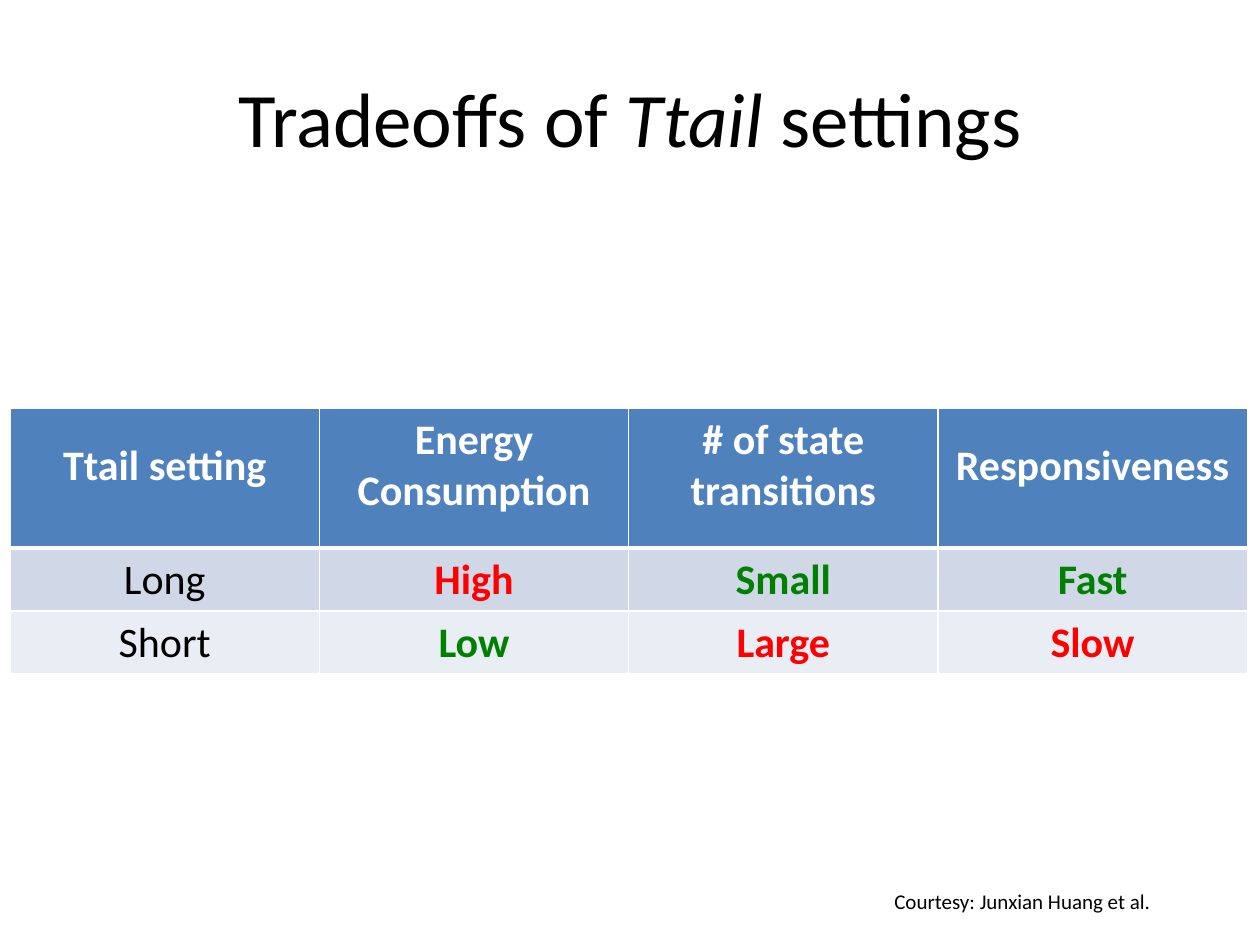
from lxml import etree
from pptx import Presentation
from pptx.dml.color import RGBColor
from pptx.enum.text import MSO_ANCHOR, PP_ALIGN
from pptx.oxml.ns import qn
from pptx.util import Inches, Pt

CENTER, LEFT = PP_ALIGN.CENTER, PP_ALIGN.LEFT
MIDDLE, TOP = MSO_ANCHOR.MIDDLE, MSO_ANCHOR.TOP

BLACK = RGBColor(0x00, 0x00, 0x00)
WHITE = RGBColor(0xFF, 0xFF, 0xFF)
RED = RGBColor(0xFF, 0x00, 0x00)
GREEN = RGBColor(0x00, 0x80, 0x00)
HEADER_BLUE = RGBColor(0x4F, 0x81, 0xBD)
BAND_DARK = RGBColor(0xD0, 0xD8, 0xE8)
BAND_LIGHT = RGBColor(0xE9, 0xED, 0xF4)

FONT = "Calibri"
HEADINGS = ["Ttail setting", "Energy Consumption", "# of state transitions", "Responsiveness"]
SETTINGS = [
    (BAND_DARK, [("Long", BLACK), ("High", RED), ("Small", GREEN), ("Fast", GREEN)]),
    (BAND_LIGHT, [("Short", BLACK), ("Low", GREEN), ("Large", RED), ("Slow", RED)]),
]
ROW_HEIGHTS = [Inches(1.11), Inches(0.5), Inches(0.5)]


def add_run(paragraph, text, size, color=BLACK, bold=False, italic=False):
    run = paragraph.add_run()
    run.text = text
    font = run.font
    font.name, font.size = FONT, Pt(size)
    font.bold, font.italic = bold, italic
    font.color.rgb = color


def add_text(slide, box, runs, size, align=LEFT, anchor=TOP, wrap=True):
    """Add one paragraph made of (text, italic) runs."""
    frame = slide.shapes.add_textbox(*box).text_frame
    frame.word_wrap = wrap
    frame.vertical_anchor = anchor
    paragraph = frame.paragraphs[0]
    paragraph.alignment = align
    for text, italic in runs:
        add_run(paragraph, text, size, italic=italic)


def set_borders(cell, bottom_width):
    """Draw white cell borders; they must come before the fill in the XML."""
    properties = cell._tc.get_or_add_tcPr()
    widths = {"a:lnL": 1, "a:lnR": 1, "a:lnT": 1, "a:lnB": bottom_width}
    for position, (tag, width) in enumerate(widths.items()):
        line = etree.Element(qn(tag), w=str(Pt(width)))
        fill = etree.SubElement(line, qn("a:solidFill"))
        etree.SubElement(fill, qn("a:srgbClr"), val=str(WHITE))
        properties.insert(position, line)


def fill_cell(cell, text, color, background, bold, bottom_width=1, spacing=None):
    cell.fill.solid()
    cell.fill.fore_color.rgb = background
    set_borders(cell, bottom_width)
    paragraph = cell.text_frame.paragraphs[0]
    paragraph.alignment = CENTER
    paragraph.line_spacing = spacing
    add_run(paragraph, text, 24, color, bold)


def add_tradeoff_table(slide, left, top, width):
    table = slide.shapes.add_table(
        len(ROW_HEIGHTS), len(HEADINGS), left, top, width, sum(ROW_HEIGHTS)
    ).table
    for row, height in zip(table.rows, ROW_HEIGHTS):
        row.height = height
    for column, heading in enumerate(HEADINGS):
        one_line = heading in ("Ttail setting", "Responsiveness")
        fill_cell(table.cell(0, column), heading, WHITE, HEADER_BLUE, True,
                  bottom_width=3, spacing=1.5 if one_line else None)
    for row, (band, values) in enumerate(SETTINGS, start=1):
        for column, (text, color) in enumerate(values):
            fill_cell(table.cell(row, column), text, color, band, bold=column > 0)
            if row == 1:
                top_line = table.cell(row, column)._tc.tcPr.find(qn("a:lnT"))
                top_line.set("w", str(Pt(3)))


def main():
    presentation = Presentation()
    presentation.slide_width, presentation.slide_height = Inches(10), Inches(7.5)
    slide = presentation.slides.add_slide(presentation.slide_layouts[6])
    title_box = Inches(0.5), Inches(0.3), Inches(9), Inches(1.25)
    add_text(slide, title_box,
             [("Tradeoffs of ", False), ("Ttail", True), (" settings", False)],
             44, CENTER, MIDDLE)
    add_tradeoff_table(slide, Inches(0.08), Inches(3.24), Inches(9.82))
    courtesy_box = Inches(7), Inches(7), Inches(2.26), Inches(0.3)
    add_text(slide, courtesy_box, [("Courtesy: Junxian Huang et al.", False)], 12, wrap=False)
    presentation.save("out.pptx")


if __name__ == "__main__":
    main()
